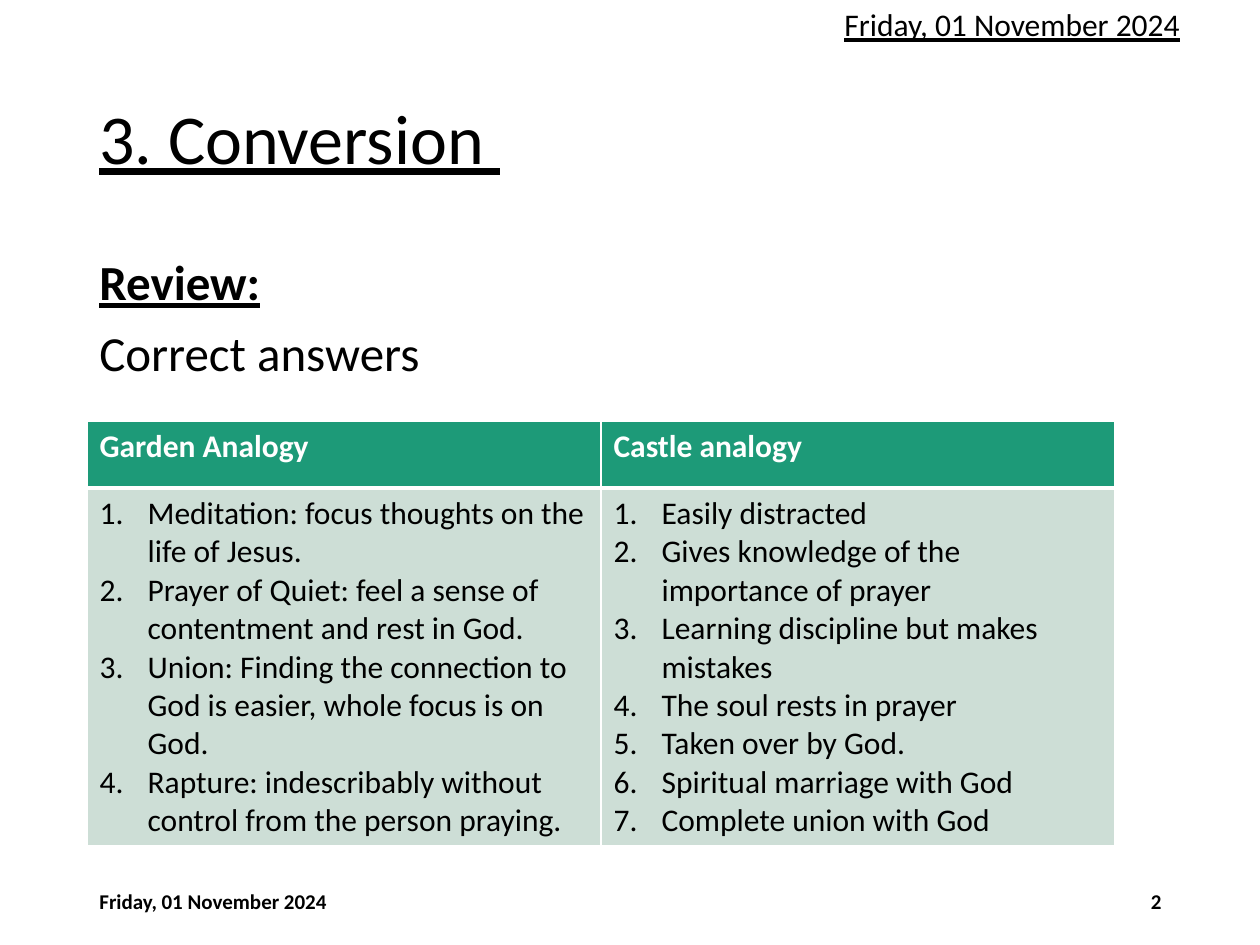
from lxml import etree
from pptx import Presentation
from pptx.dml.color import RGBColor
from pptx.enum.text import MSO_ANCHOR, PP_ALIGN
from pptx.oxml.ns import qn
from pptx.util import Pt

PX = 914400 // 126
TOP, MID = MSO_ANCHOR.TOP, MSO_ANCHOR.MIDDLE
LEFT, RIGHT = PP_ALIGN.LEFT, PP_ALIGN.RIGHT
BLACK, WHITE, GREEN, PALE = "000000", "FFFFFF", "1D9A78", "CDDED6"


def write(para, text, size, color=BLACK, bold=False, under=False):
    run = para.add_run()
    run.text = text
    font = run.font
    font.name, font.size = "Calibri", Pt(size)
    font.bold, font.underline = bold, under
    font.color.rgb = RGBColor.from_string(color)


def add_box(left, top, width, height, anchor=TOP):
    box = slide.shapes.add_textbox(left * PX, top * PX, width * PX, height * PX)
    frame = box.text_frame
    frame.word_wrap = True
    frame.vertical_anchor = anchor
    return frame


deck = Presentation()
deck.slide_width, deck.slide_height = 1260 * PX, 945 * PX
slide = deck.slides.add_slide(deck.slide_layouts[6])

# Title
para = add_box(87, 50, 1086, 183, MID).paragraphs[0]
para.line_spacing = 0.9
write(para, "3. Conversion ", 40, under=True)

# Date at the top
date = "Friday, 01 November 2024"
write(add_box(832, -1, 438, 50).paragraphs[0], date, 18, under=True)

# Body
body = add_box(87, 252, 1086, 600)
for i, (text, head) in enumerate([("Review:", True), ("Correct answers", False)]):
    para = body.add_paragraph() if i else body.paragraphs[0]
    para.line_spacing = 0.9
    para.space_before = Pt(10)
    write(para, text, 28, bold=head, under=head)

# Footer
for left, text, align in [(87, date, LEFT), (890, "2", RIGHT)]:
    para = add_box(left, 876, 284, 50, MID).paragraphs[0]
    para.alignment = align
    write(para, text, 12, bold=True)

# Table
lists = [
    ("Garden Analogy", [
        "Meditation: focus thoughts on the life of Jesus.",
        "Prayer of Quiet: feel a sense of contentment and rest in God.",
        "Union: Finding the connection to God is easier, whole focus is on God.",
        "Rapture: indescribably without control from the person praying.",
    ]),
    ("Castle analogy", [
        "Easily distracted",
        "Gives knowledge of the importance of prayer",
        "Learning discipline but makes mistakes",
        "The soul rests in prayer",
        "Taken over by God.",
        "Spiritual marriage with God",
        "Complete union with God",
    ]),
]
table = slide.shapes.add_table(2, 2, 87 * PX, 421 * PX, 1028 * PX, 425 * PX).table
table.rows[0].height, table.rows[1].height = 67 * PX, 358 * PX

for col, (head, items) in enumerate(lists):
    top, cell = table.cell(0, col), table.cell(1, col)
    write(top.text_frame.paragraphs[0], head, 18, WHITE, bold=True)

    # Numbered items
    frame = cell.text_frame
    for i, item in enumerate(items):
        para = frame.add_paragraph() if i else frame.paragraphs[0]
        write(para, item, 18)
        props = para._p.get_or_add_pPr()
        props.set("marL", str(48 * PX))
        props.set("indent", str(-48 * PX))
        etree.SubElement(props, qn("a:buFont"), typeface="+mj-lt")
        etree.SubElement(props, qn("a:buAutoNum"), type="arabicPeriod")

    # Fills and borders, with a thick rule under the heading
    for part, fill, thick in [(top, GREEN, "B"), (cell, PALE, "T")]:
        part.fill.solid()
        part.fill.fore_color.rgb = RGBColor.from_string(fill)
        props = part._tc.get_or_add_tcPr()
        for i, side in enumerate("LRTB"):
            width = Pt(3 if side == thick else 1)
            line = etree.Element(qn("a:ln" + side), w=str(width))
            solid = etree.SubElement(line, qn("a:solidFill"))
            etree.SubElement(solid, qn("a:srgbClr"), val=WHITE)
            props.insert(i, line)

deck.save("out.pptx")
